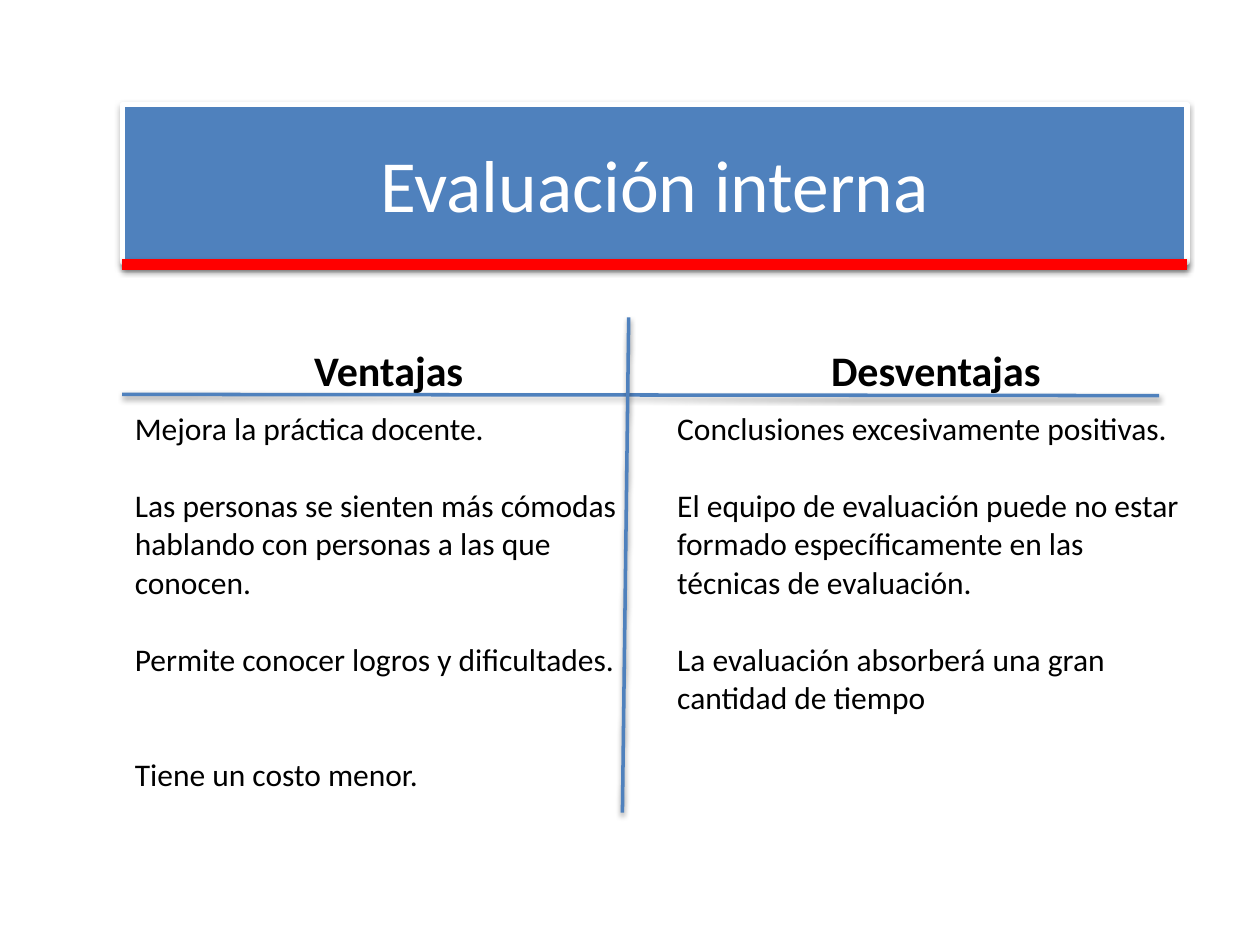
"""Builds a slide that sets out the pros and cons of internal evaluation."""
from pptx import Presentation, oxml
from pptx import util as u
from pptx.dml.color import RGBColor
from pptx.enum import shapes, text
from pptx.oxml.ns import nsdecls

BLUE, RED, WHITE, BLACK = "4F81BD", "FF0000", "FFFFFF", "000000"
LEFT, RIGHT = 0.97, 9.42
LINE_GAP = 22
PROS = [
    ("Mejora la práctica docente.", 0),
    ("Las personas se sienten más cómodas hablando con personas a las que conocen.", 1),
    ("Permite conocer logros y dificultades.", 1),
    ("Tiene un costo menor.", 2),
]
CONS = [
    ("Conclusiones excesivamente positivas.", 0),
    ("El equipo de evaluación puede no estar formado específicamente en las técnicas de evaluación.", 1),
    ("La evaluación absorberá una gran cantidad de tiempo", 1),
]


def color(value):
    return RGBColor.from_string(value)


class Painter:
    def __init__(self, page, font="Calibri"):
        self.page = page
        self.font = font

    def outline(self, item, tint, width):
        item.line.color.rgb = color(tint)
        item.line.width = u.Pt(width)

    def shadow(self, item):
        item.element.spPr.append(oxml.parse_xml(
            f'<a:effectLst {nsdecls("a")}>'
            f'<a:outerShdw blurRad="{u.Pt(3.1)}" dist="{u.Pt(1.6)}" dir="5400000" rotWithShape="0">'
            f'<a:srgbClr val="{BLACK}"><a:alpha val="38000"/></a:srgbClr>'
            '</a:outerShdw></a:effectLst>'))

    def fill_text(self, frame, lines, size, tint=BLACK, bold=False, align=text.PP_ALIGN.LEFT):
        frame.word_wrap = True
        for index, (words, gaps) in enumerate(lines):
            para = frame.add_paragraph() if index else frame.paragraphs[0]
            para.alignment = align
            if gaps:
                para.space_before = u.Pt(gaps * LINE_GAP)
            span = para.add_run()
            span.text = words
            span.font.color.rgb = color(tint)
            for name, value in {"name": self.font, "size": u.Pt(size), "bold": bold}.items():
                setattr(span.font, name, value)

    def banner(self, words, *place):
        box = self.page.shapes.add_shape(shapes.MSO_SHAPE.RECTANGLE, *map(u.Inches, place))
        box.fill.solid()
        box.fill.fore_color.rgb = color(BLUE)
        self.outline(box, WHITE, 3)
        self.shadow(box)
        box.text_frame.vertical_anchor = text.MSO_ANCHOR.MIDDLE
        self.fill_text(box.text_frame, [(words, 0)], 42, WHITE, align=text.PP_ALIGN.CENTER)

    def rule(self, tint, width, *ends):
        line = self.page.shapes.add_connector(shapes.MSO_CONNECTOR.STRAIGHT, *map(u.Inches, ends))
        self.outline(line, tint, width)
        self.shadow(line)

    def table(self, columns, heights, *place):
        grid = self.page.shapes.add_table(len(heights), len(columns), *map(u.Inches, place)).table
        grid.first_row = grid.horz_banding = False
        for row, height in zip(grid.rows, heights):
            row.height = u.Inches(height)
        for index, (heading, lines) in enumerate(columns):
            head, body = grid.cell(0, index), grid.cell(1, index)
            for cell in (head, body):
                cell.fill.background()
            self.fill_text(head.text_frame, [(heading, 0)], 24, bold=True, align=text.PP_ALIGN.CENTER)
            self.fill_text(body.text_frame, lines, 18)


def main():
    deck = Presentation()
    deck.slide_width, deck.slide_height = u.Inches(10), u.Inches(7.5)
    painter = Painter(deck.slides.add_slide(deck.slide_layouts[6]))
    painter.banner("Evaluación interna", LEFT, 0.83, RIGHT - LEFT, 1.25)
    painter.rule(RED, 6, LEFT, 2.1, RIGHT, 2.1)
    painter.table([("Ventajas ", PROS), ("Desventajas", CONS)], [0.5, 4.06], LEFT, 2.7, 8.61, 4.56)
    painter.rule(BLUE, 2, LEFT, 3.13, 9.2, 3.14)
    painter.rule(BLUE, 2, 4.99, 2.52, 4.94, 6.45)
    deck.save("out.pptx")


if __name__ == "__main__":
    main()
